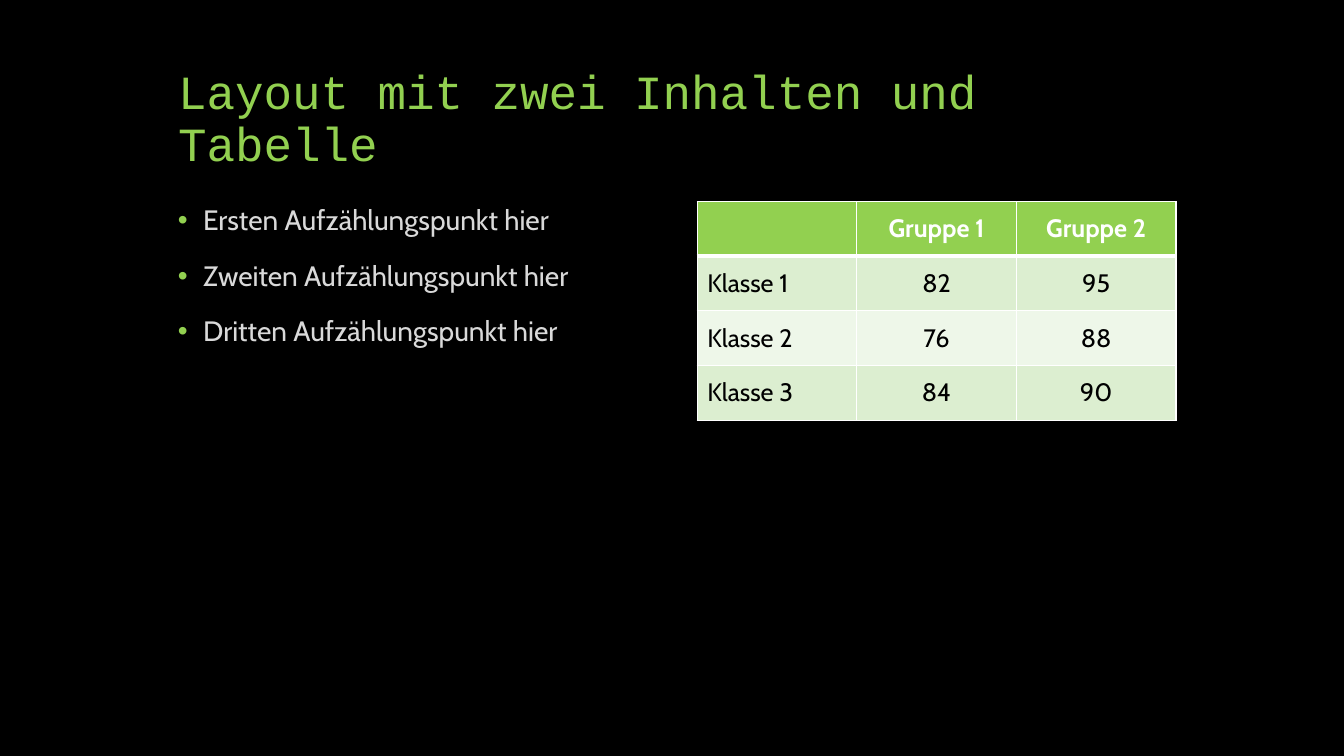
import pptx
import pptx.dml.color
import pptx.enum.text
import pptx.oxml
import pptx.oxml.ns
import pptx.util
from lxml import etree

RGBColor = pptx.dml.color.RGBColor
Inches = pptx.util.Inches
Pt = pptx.util.Pt
ALIGN = pptx.enum.text.PP_ALIGN
ANCHOR = pptx.enum.text.MSO_ANCHOR
qn = pptx.oxml.ns.qn

BLACK = RGBColor(0x00, 0x00, 0x00)
WHITE = RGBColor(0xFF, 0xFF, 0xFF)
GREEN = RGBColor(0x92, 0xD0, 0x50)
LIGHT_GRAY = RGBColor(0xD9, 0xD9, 0xD9)
BANDS = [RGBColor(0xEE, 0xF7, 0xE9), RGBColor(0xDC, 0xEE, 0xD0)]

BULLETS = ["Ersten Aufzählungspunkt hier", "Zweiten Aufzählungspunkt hier", "Dritten Aufzählungspunkt hier"]
SCORES = [
    ["", "Gruppe 1", "Gruppe 2"],
    ["Klasse 1", "82", "95"],
    ["Klasse 2", "76", "88"],
    ["Klasse 3", "84", "90"],
]


def add_color(parent, color):
    fill = etree.SubElement(parent, qn("a:solidFill"))
    etree.SubElement(fill, qn("a:srgbClr"), val=str(color))


presentation = pptx.Presentation()
presentation.slide_width = Inches(13.33)
presentation.slide_height = Inches(7.5)
slide = presentation.slides.add_slide(presentation.slide_layouts[5])
slide.background.fill.solid()
slide.background.fill.fore_color.rgb = BLACK

# Two equal columns inside the side margins
margin = presentation.slide_width // 8
content_width = presentation.slide_width - 2 * margin
gap = Inches(0.5)
column_width = (content_width - gap) // 2
content_top = Inches(2)

title = slide.shapes.title
title.left, title.top = margin, Inches(0.5)
title.width, title.height = content_width, Inches(1.25)
title.text_frame.text = "Layout mit zwei Inhalten und Tabelle"
title.text_frame.auto_size = pptx.enum.text.MSO_AUTO_SIZE.NONE
title.text_frame.vertical_anchor = ANCHOR.BOTTOM
heading = title.text_frame.paragraphs[0]
heading.alignment = ALIGN.LEFT
heading.line_spacing = 0.9
heading.font.name = "Courier New"
heading.font.size = Pt(34)
heading.font.color.rgb = GREEN

# Bullet list in the left column
body = slide.shapes.add_textbox(margin, content_top, column_width, Inches(4.67))
body.text_frame.word_wrap = True
body.text_frame.text = "\n".join(BULLETS)
for index, paragraph in enumerate(body.text_frame.paragraphs):
    paragraph.line_spacing = 0.9
    paragraph.space_before = Pt(18 if index else 0)
    properties = paragraph._p.get_or_add_pPr()
    properties.set("marL", str(Inches(0.25)))
    properties.set("indent", str(-Inches(0.25)))
    bullet_color = etree.SubElement(properties, qn("a:buClr"))
    etree.SubElement(bullet_color, qn("a:srgbClr"), val=str(GREEN))
    etree.SubElement(properties, qn("a:buFont"), typeface="Arial")
    etree.SubElement(properties, qn("a:buChar"), char="•")
    paragraph.font.name = "Cabin"
    paragraph.font.size = Pt(20)
    paragraph.font.color.rgb = LIGHT_GRAY

# Score table in the right column
table = slide.shapes.add_table(
    len(SCORES), len(SCORES[0]), margin + column_width + gap, content_top, column_width, Inches(2.17)
).table
for row, values in enumerate(SCORES):
    for column, value in enumerate(values):
        cell = table.cell(row, column)
        is_header = row == 0
        cell_properties = cell._tc.get_or_add_tcPr()
        widths = {"L": 1, "R": 1, "T": 3 if row == 1 else 1, "B": 3 if is_header else 1}
        for side, width in widths.items():
            border = etree.SubElement(cell_properties, qn(f"a:ln{side}"), w=str(Pt(width)))
            add_color(border, WHITE)
        cell.fill.solid()
        cell.fill.fore_color.rgb = GREEN if is_header else BANDS[row % 2]
        cell.vertical_anchor = ANCHOR.MIDDLE
        cell.text = value
        paragraph = cell.text_frame.paragraphs[0]
        paragraph.alignment = ALIGN.CENTER if column else ALIGN.LEFT
        paragraph.font.name = "Cabin"
        paragraph.font.size = Pt(18)
        paragraph.font.bold = is_header
        paragraph.font.color.rgb = WHITE if is_header else BLACK

presentation.save("out.pptx")
